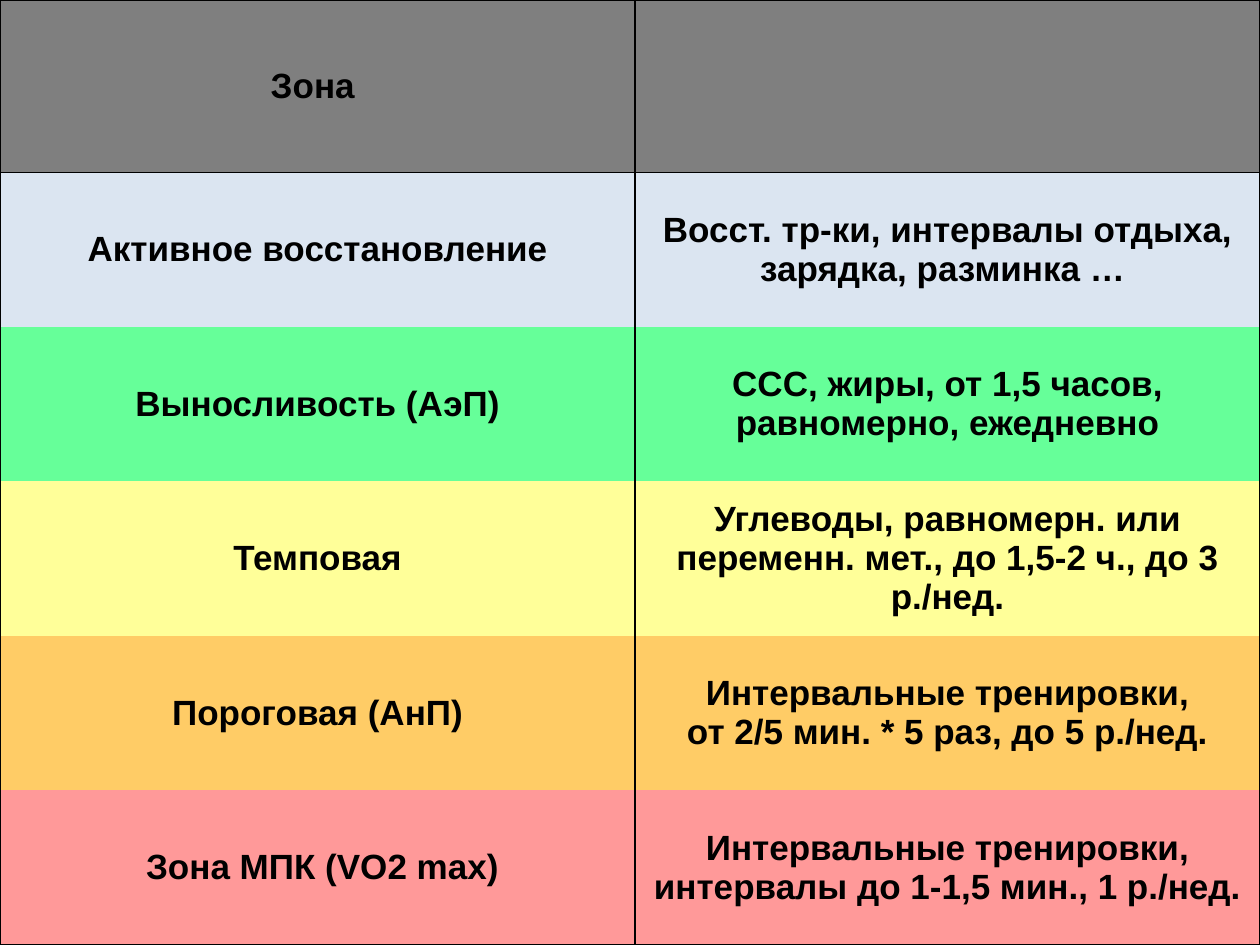
from dataclasses import dataclass

from lxml.etree import SubElement
from pptx import Presentation
from pptx.dml.color import RGBColor
from pptx.enum.text import MSO_ANCHOR, PP_ALIGN
from pptx.oxml.ns import qn
from pptx.slide import Slide
from pptx.util import Pt

BLACK = RGBColor(0x00, 0x00, 0x00)
GRAY = RGBColor(0x7F, 0x7F, 0x7F)
BLUE = RGBColor(0xDB, 0xE5, 0xF1)
GREEN = RGBColor(0x66, 0xFF, 0x99)
YELLOW = RGBColor(0xFF, 0xFF, 0x99)
ORANGE = RGBColor(0xFF, 0xCC, 0x66)
RED = RGBColor(0xFF, 0x99, 0x99)

WIDTH, HEIGHT = 720, 540
ZONE_WIDTH, HEADER_HEIGHT = 363, 98.5

ZONES = [
    (GRAY, "Зона ", ""),
    (BLUE, "Активное восстановление",
     "Восст. тр-ки, интервалы отдыха, зарядка, разминка … "),
    (GREEN, "Выносливость (АэП)", "ССС, жиры, от 1,5 часов, равномерно, ежедневно"),
    (YELLOW, "Темповая",
     "Углеводы, равномерн. или переменн. мет., до 1,5-2 ч., до 3 р./нед."),
    (ORANGE, "Пороговая (АнП)",
     "Интервальные тренировки,\nот 2/5 мин. * 5 раз, до 5 р./нед."),
    (RED, " Зона МПК (VO2 maх)",
     "Интервальные тренировки, интервалы до 1-1,5 мин., 1 р./нед."),
]


@dataclass
class ZoneSlide:
    """Table elements in one style on the current slide."""

    slide: Slide
    font_name: str = "Arial"
    font_size: float = 20
    border_width: float = 1

    def border(self, cell, sides):
        properties = cell._tc.get_or_add_tcPr()
        for side in "LRTB":
            line = SubElement(properties, qn(f"a:ln{side}"), w=str(Pt(self.border_width)))
            if side in sides:
                color = SubElement(SubElement(line, qn("a:solidFill")), qn("a:srgbClr"))
                color.set("val", str(BLACK))
            else:
                SubElement(line, qn("a:noFill"))

    def cell(self, cell, text, color, sides):
        self.border(cell, sides)
        cell.fill.solid()
        cell.fill.fore_color.rgb = color
        cell.vertical_anchor = MSO_ANCHOR.MIDDLE
        cell.margin_left = cell.margin_right = Pt(0)
        cell.margin_top = cell.margin_bottom = Pt(0)
        cell.text = text
        for paragraph in cell.text_frame.paragraphs:
            paragraph.alignment = PP_ALIGN.CENTER
            paragraph.font.name = self.font_name
            paragraph.font.size = Pt(self.font_size)
            paragraph.font.bold = True
            paragraph.font.color.rgb = BLACK

    def table(self, zones):
        table = self.slide.shapes.add_table(
            len(zones), 2, Pt(0), Pt(0), Pt(WIDTH), Pt(HEIGHT)).table
        table.horz_banding = False
        table.columns[0].width = Pt(ZONE_WIDTH)
        table.columns[1].width = Pt(WIDTH - ZONE_WIDTH)
        last = len(zones) - 1
        for index, (color, *texts) in enumerate(zones):
            height = (HEIGHT - HEADER_HEIGHT) / last if index else HEADER_HEIGHT
            table.rows[index].height = Pt(height)
            sides = "LR" + "T" * (index <= 1) + "B" * (index in (0, last))
            for column, text in enumerate(texts):
                self.cell(table.cell(index, column), text, color, sides)


def main():
    presentation = Presentation()
    presentation.slide_width = Pt(WIDTH)
    presentation.slide_height = Pt(HEIGHT)
    blank_layout = presentation.slide_layouts[6]
    ZoneSlide(presentation.slides.add_slide(blank_layout)).table(ZONES)
    presentation.save("out.pptx")


if __name__ == "__main__":
    main()
